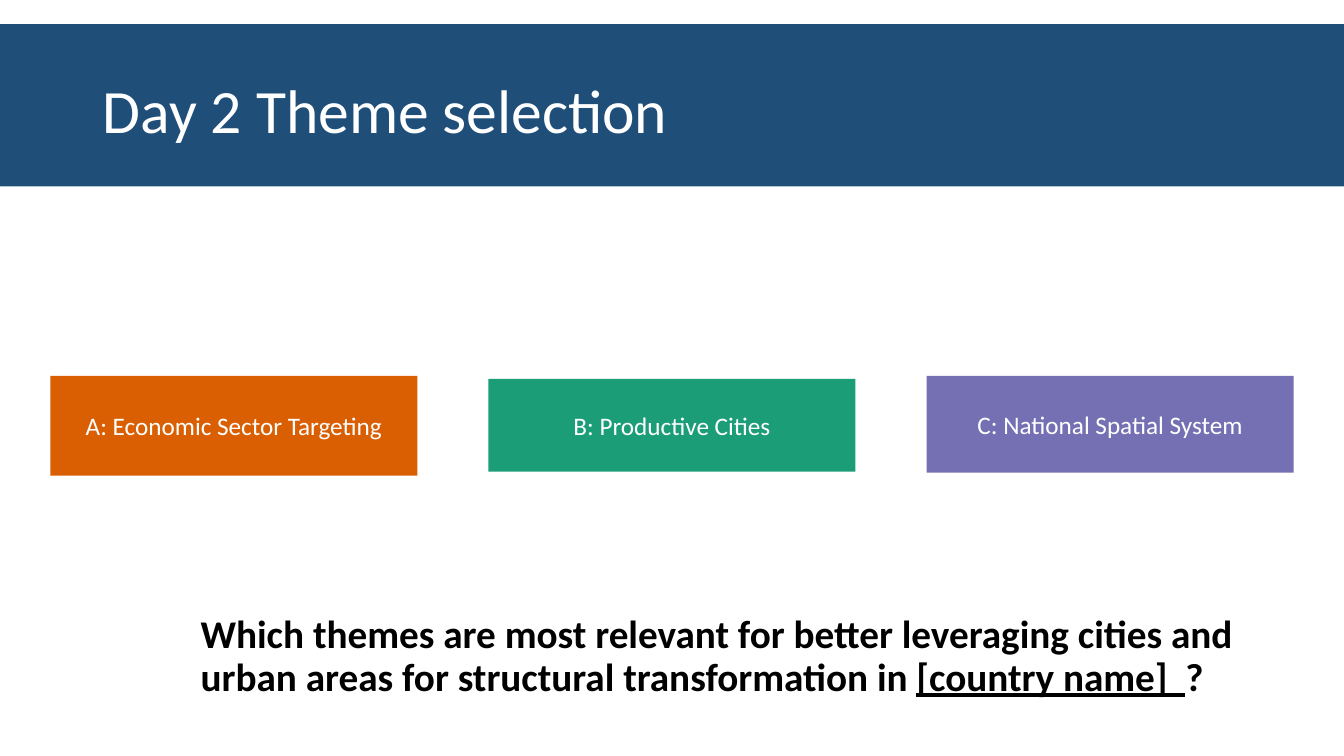
from lxml import etree
from pptx import Presentation
from pptx.dml.color import RGBColor
from pptx.enum.shapes import MSO_SHAPE as Shape
from pptx.enum.text import MSO_ANCHOR as Anchor, MSO_AUTO_SIZE as AutoSize, PP_ALIGN as Align
from pptx.oxml.ns import qn
from pptx.util import Inches, Pt

NAVY = RGBColor(0x1F, 0x4E, 0x79)
ORANGE = RGBColor(0xD9, 0x5F, 0x02)
GREEN = RGBColor(0x1B, 0x9E, 0x77)
PURPLE = RGBColor(0x75, 0x70, 0xB3)
WHITE = RGBColor(0xFF, 0xFF, 0xFF)
BLACK = RGBColor(0x00, 0x00, 0x00)

THEME_LEFT, THEME_WIDTH, THEME_STEP = 0.5, 3.64, 4.345
THEMES = [
    ("A: Economic Sector Targeting", ORANGE, 3.73, 0.99),
    ("B: Productive Cities", GREEN, 3.76, 0.92),
    ("C: National Spatial System", PURPLE, 3.73, 0.96),
]
QUESTION = [
    ("Which themes are most relevant for better leveraging cities and "
     "urban areas for structural transformation in ", False),
    ("[country name]  ", True),
    ("?", False),
]


def place(shape, left, top, width, height):
    shape.left, shape.top = Inches(left), Inches(top)
    shape.width, shape.height = Inches(width), Inches(height)


def format_span(span, size, color, bold=False, underline=False):
    font = span.font
    font.name, font.size, font.color.rgb = "Calibri", Pt(size), color
    font.bold, font.underline = bold, underline


def add_block(page, left, top, width, height, color):
    block = page.shapes.add_shape(
        Shape.RECTANGLE, Inches(left), Inches(top), Inches(width), Inches(height))
    block.shadow.inherit = False
    block.fill.solid()
    block.fill.fore_color.rgb = color
    block.line.fill.background()
    return block


def add_band(page):
    band = add_block(page, 0, 0.24, 13.33, 1.61, NAVY)
    page.shapes.title._element.addprevious(band._element)


def set_title(page):
    title = page.shapes.title
    place(title, 0.92, 0.4, 11.5, 1.45)
    frame = title.text_frame
    frame.text = "Day 2 Theme selection"
    frame.vertical_anchor = Anchor.MIDDLE
    frame.auto_size = AutoSize.NONE
    para = frame.paragraphs[0]
    para.alignment, para.line_spacing = Align.LEFT, 0.9
    format_span(para.runs[0], 44, WHITE)


def add_theme(page, index, label, color, top, height):
    box = add_block(page, THEME_LEFT + index * THEME_STEP, top, THEME_WIDTH, height, color)
    frame = box.text_frame
    frame.text = label
    frame.vertical_anchor = Anchor.MIDDLE
    para = frame.paragraphs[0]
    para.alignment = Align.CENTER
    format_span(para.runs[0], 18, WHITE)


def set_question(page):
    body = page.placeholders[1]
    place(body, 1.89, 6.05, 10.62, 1.21)
    frame = body.text_frame
    frame.auto_size = AutoSize.NONE
    para = frame.paragraphs[0]
    para.line_spacing, para.space_before = 0.9, Pt(10)
    for text, underline in QUESTION:
        span = para.add_run()
        span.text = text
        format_span(span, 28, BLACK, True, underline)
    properties = para._p.get_or_add_pPr()
    properties.set("marL", "0")
    properties.set("indent", "0")
    etree.SubElement(properties, qn("a:buNone"))


def main():
    deck = Presentation()
    deck.slide_width, deck.slide_height = Inches(13.33), Inches(7.5)
    page = deck.slides.add_slide(deck.slide_layouts[1])
    add_band(page)
    set_title(page)
    for index, theme in enumerate(THEMES):
        add_theme(page, index, *theme)
    set_question(page)
    deck.save("out.pptx")


if __name__ == "__main__":
    main()
